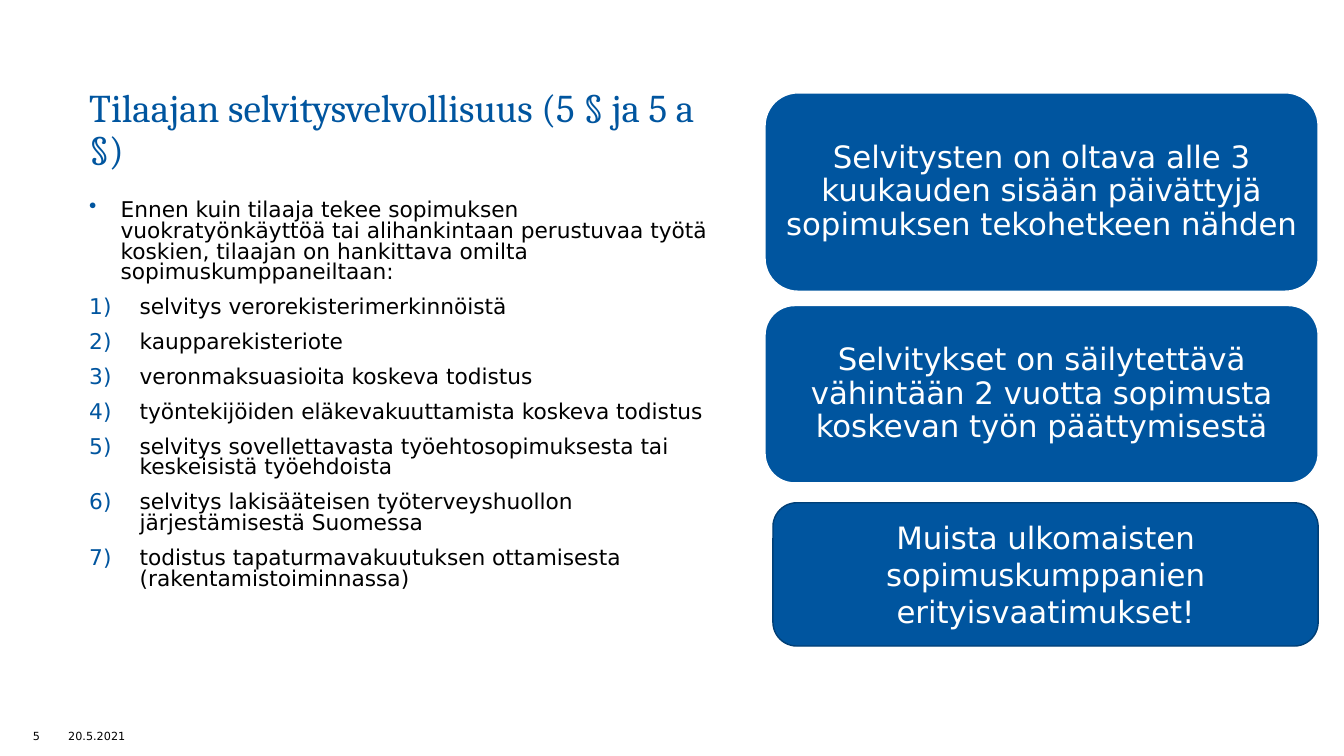
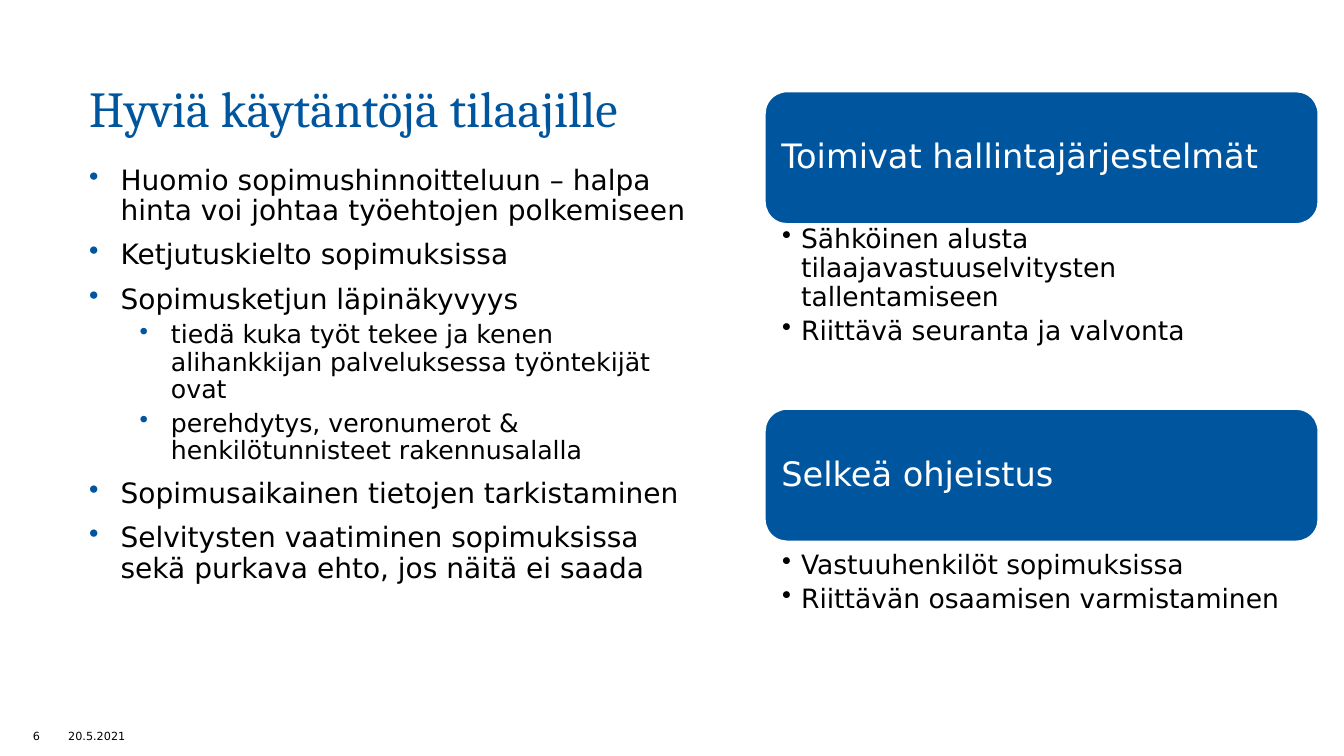
from dataclasses import dataclass
from typing import Optional

from lxml.etree import SubElement
from pptx import Presentation
from pptx.dml.color import RGBColor
from pptx.enum.shapes import MSO_SHAPE
from pptx.enum.text import MSO_ANCHOR, PP_ALIGN
from pptx.oxml.ns import qn
from pptx.util import Cm, Pt

# Shared look
COLORS = {"blue": "00559F", "dark_blue": "003F76", "white": "FFFFFF", "black": "000000"}
HEADING_FONT = "Cambria"
BODY_FONT = "DejaVu Sans"
DATE = "20.5.2021"
LEFT = 2.0
CARD_LEFT, CARD_WIDTH = 19.28, 13.94
BULLET, NUMBER = "buChar", "buAutoNum"


@dataclass(frozen=True)
class Area:
    """Place of an element in centimetres."""
    left: float
    top: float
    width: float
    height: float

    def lengths(self) -> tuple:
        return Cm(self.left), Cm(self.top), Cm(self.width), Cm(self.height)


@dataclass(frozen=True)
class Style:
    """Text format; lengths in centimetres, sizes in points."""
    size: float
    color: str = "black"
    font: str = BODY_FONT
    spacing: float = 1.0
    before: float = 0
    after: float = 0
    align: PP_ALIGN = PP_ALIGN.LEFT
    level: int = 0
    marker: Optional[str] = None
    marker_color: str = "blue"
    indent: float = 0
    hanging: float = 0


@dataclass(frozen=True)
class Item:
    text: str
    style: Style


@dataclass(frozen=True)
class Card:
    area: Area
    text: str
    style: Style
    inset: tuple[float, float]
    line: str = "white"


@dataclass(frozen=True)
class Topic:
    heading: str
    points: tuple[str, ...]
    points_offset: float
    points_height: float


def rgb(name: str) -> RGBColor:
    return RGBColor.from_string(COLORS[name])


def add_marker(para, style: Style) -> None:
    """Give the paragraph a bullet or an automatic number."""
    properties = para._p.get_or_add_pPr()
    properties.set("marL", str(Cm(style.indent)))
    properties.set("indent", str(-Cm(style.hanging)))
    color = SubElement(properties, qn("a:buClr"))
    SubElement(color, qn("a:srgbClr"), val=COLORS[style.marker_color])
    values = {BULLET: {"char": "•"}, NUMBER: {"type": "arabicParenR"}}
    SubElement(properties, qn(f"a:{style.marker}"), **values[style.marker])


def write(frame, items: list[Item], anchor: MSO_ANCHOR = MSO_ANCHOR.TOP,
          inset: tuple[float, float] = (0.25, 0.13)) -> None:
    across, down = (Cm(value) for value in inset)
    frame_format = {
        "word_wrap": True, "vertical_anchor": anchor,
        "margin_left": across, "margin_right": across,
        "margin_top": down, "margin_bottom": down,
    }
    for name, value in frame_format.items():
        setattr(frame, name, value)
    for index, item in enumerate(items):
        style = item.style
        para = frame.add_paragraph() if index else frame.paragraphs[0]
        para_format = {
            "level": style.level, "alignment": style.align,
            "line_spacing": style.spacing, "space_after": Pt(style.after),
            "space_before": Pt(style.before if index else 0),
        }
        for name, value in para_format.items():
            setattr(para, name, value)
        if style.marker:
            add_marker(para, style)
        span = para.add_run()
        span.text = item.text
        for name, value in {"name": style.font, "size": Pt(style.size)}.items():
            setattr(span.font, name, value)
        span.font.color.rgb = rgb(style.color)


def add_text(page, area: Area, items: list[Item], **options) -> None:
    box = page.shapes.add_textbox(*area.lengths())
    write(box.text_frame, items, **options)


def add_card(page, card: Card) -> None:
    box = page.shapes.add_shape(MSO_SHAPE.ROUNDED_RECTANGLE, *card.area.lengths())
    box.shadow.inherit = False
    box.fill.solid()
    box.fill.fore_color.rgb = rgb("blue")
    box.line.color.rgb = rgb(card.line)
    box.line.width = Pt(1)
    write(box.text_frame, [Item(card.text, card.style)], MSO_ANCHOR.MIDDLE, card.inset)


def add_page(deck, number: int, title: str, title_size: float, title_height: float):
    """Add a blank page with its title and footer."""
    page = deck.slides.add_slide(deck.slide_layouts[6])
    title_style = Style(title_size, "blue", HEADING_FONT, 0.9)
    add_text(page, Area(LEFT, 1.98, 16.08, title_height),
             [Item(title, title_style)], anchor=MSO_ANCHOR.BOTTOM)
    add_text(page, Area(1.47, 18.03, 2.44, 1.02),
             [Item(DATE, Style(8))], anchor=MSO_ANCHOR.MIDDLE)
    add_text(page, Area(0, 18.03, 1.26, 1.02),
             [Item(str(number), Style(8, align=PP_ALIGN.RIGHT))], anchor=MSO_ANCHOR.MIDDLE)
    return page


def build_duty_page(deck) -> None:
    page = add_page(deck, 5, "Tilaajan selvitysvelvollisuus (5 § ja 5 a §)", 28, 2.51)

    # Required documents
    intro = Style(15.5, spacing=0.8, before=10, marker=BULLET, indent=0.79, hanging=0.79)
    numbered = Style(15.5, spacing=0.8, before=10, marker=NUMBER, indent=1.27, hanging=1.27)
    documents = [
        "selvitys verorekisterimerkinnöistä",
        "kaupparekisteriote",
        "veronmaksuasioita koskeva todistus",
        "työntekijöiden eläkevakuuttamista koskeva todistus",
        "selvitys sovellettavasta työehtosopimuksesta tai keskeisistä työehdoista",
        "selvitys lakisääteisen työterveyshuollon järjestämisestä Suomessa",
        "todistus tapaturmavakuutuksen ottamisesta (rakentamistoiminnassa)",
    ]
    opening = Item(
        "Ennen kuin tilaaja tekee sopimuksen vuokratyönkäyttöä tai alihankintaan "
        "perustuvaa työtä koskien, tilaajan on hankittava omilta "
        "sopimuskumppaneiltaan:", intro)
    add_text(page, Area(LEFT, 4.93, 16.59, 11.05),
             [opening] + [Item(text, numbered) for text in documents])

    # Reminder cards
    tight = Style(22, "white", spacing=0.9, align=PP_ALIGN.CENTER)
    loose = Style(22, "white", align=PP_ALIGN.CENTER)
    cards = [
        Card(Area(CARD_LEFT, 2.34, CARD_WIDTH, 5.0),
             "Selvitysten on oltava alle 3 kuukauden sisään päivättyjä "
             "sopimuksen tekohetkeen nähden", tight, (0.23, 0.23)),
        Card(Area(CARD_LEFT, 7.7, CARD_WIDTH, 4.47),
             "Selvitykset on säilytettävä vähintään 2 vuotta sopimusta "
             "koskevan työn päättymisestä", tight, (0.23, 0.23)),
        Card(Area(19.48, 12.67, 13.74, 3.61),
             "Muista ulkomaisten sopimuskumppanien erityisvaatimukset!",
             loose, (0.25, 0.13), "dark_blue"),
    ]
    for card in cards:
        add_card(page, card)


def build_practice_page(deck) -> None:
    page = add_page(deck, 6, "Hyviä käytäntöjä tilaajille", 36, 1.63)

    # Good practices
    main_point = Style(20, spacing=0.9, before=10, marker=BULLET, indent=0.79, hanging=0.79)
    sub_point = Style(18, spacing=0.9, before=5, level=1, marker=BULLET,
                      indent=2.06, hanging=0.79)
    add_text(page, Area(LEFT, 4.06, 16.08, 11.38), [
        Item("Huomio sopimushinnoitteluun – halpa hinta voi johtaa työehtojen "
             "polkemiseen", main_point),
        Item("Ketjutuskielto sopimuksissa", main_point),
        Item("Sopimusketjun läpinäkyvyys", main_point),
        Item("tiedä kuka työt tekee ja kenen alihankkijan palveluksessa "
             "työntekijät ovat", sub_point),
        Item("perehdytys, veronumerot & henkilötunnisteet rakennusalalla", sub_point),
        Item("Sopimusaikainen tietojen tarkistaminen", main_point),
        Item("Selvitysten vaatiminen sopimuksissa sekä purkava ehto, jos näitä ei "
             "saada", main_point),
    ])

    # Topic cards with their points
    heading = Style(24, "white", spacing=0.9)
    point = Style(19, spacing=0.9, after=3.8, level=1, marker=BULLET,
                  marker_color="black", indent=0.48, hanging=0.48)
    topics = [
        Topic("Toimivat hallintajärjestelmät",
              ("Sähköinen alusta tilaajavastuuselvitysten tallentamiseen",
               "Riittävä seuranta ja valvonta"), 3.3, 3.96),
        Topic("Selkeä ohjeistus",
              ("Vastuuhenkilöt sopimuksissa",
               "Riittävän osaamisen varmistaminen"), 3.51, 2.59),
    ]
    for index, topic in enumerate(topics):
        top = 2.31 + 8.0 * index
        add_card(page, Card(Area(CARD_LEFT, top, CARD_WIDTH, 3.33),
                            topic.heading, heading, (0.25, 0.25)))
        add_text(page, Area(CARD_LEFT, top + topic.points_offset,
                            CARD_WIDTH, topic.points_height),
                 [Item(text, point) for text in topic.points], inset=(0.43, 0.08))


def main() -> None:
    deck = Presentation()
    deck.slide_width, deck.slide_height = Cm(33.87), Cm(19.05)
    build_duty_page(deck)
    build_practice_page(deck)
    deck.save("out.pptx")


if __name__ == "__main__":
    main()
